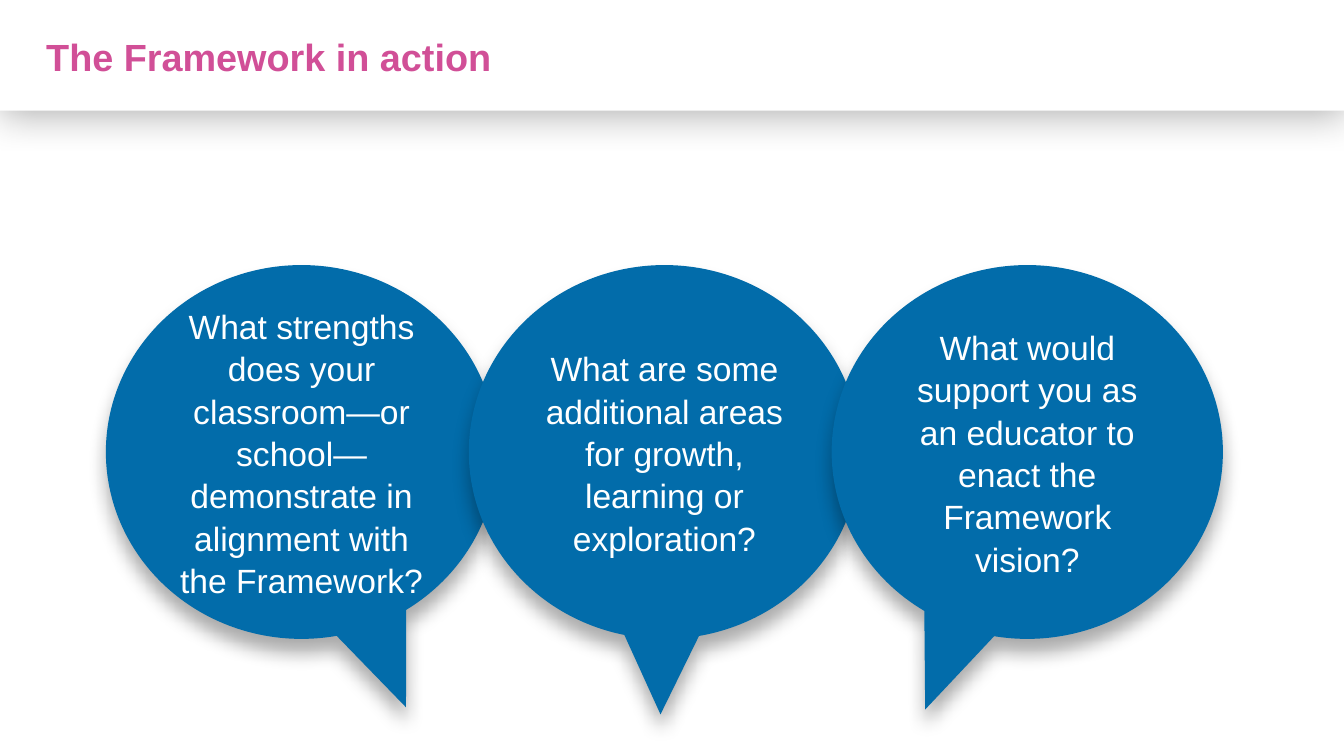
from lxml.etree import SubElement
from pptx import Presentation
from pptx.dml.color import RGBColor
from pptx.enum.shapes import MSO_SHAPE
from pptx.enum.text import MSO_ANCHOR, PP_ALIGN
from pptx.oxml.ns import qn
from pptx.util import Cm, Pt

COLORS = {"white": "FFFFFF", "pink": "D14F97", "blue": "026CAA", "shadow": "000000"}
TITLE_FONT = {"name": "Arial", "size": Pt(27), "bold": True}
BUBBLE_FONT = {"name": "Arial", "size": Pt(24), "bold": False}
TITLE_FRAME = {"word_wrap": True, "vertical_anchor": MSO_ANCHOR.MIDDLE}
BUBBLE_FRAME = {"word_wrap": True, "vertical_anchor": MSO_ANCHOR.MIDDLE}
TITLE_PARAGRAPH = {"alignment": PP_ALIGN.LEFT}
BUBBLE_PARAGRAPH = {"alignment": PP_ALIGN.CENTER, "space_after": Pt(18), "line_spacing": 1.05}
HEADER_SHADOW = {"opacity": 30, "blur": 28, "distance": 3}
BUBBLE_SHADOW = {"opacity": 32, "blur": 13, "distance": 10}
BUBBLES = [
    ("What strengths does your classroom—or school—demonstrate in alignment with the Framework?", (0.267, 0.683)),
    ("What are some additional areas for growth, learning or exploration?", (-0.01, 0.702)),
    ("What would support you as an educator to enact the Framework vision?", (-0.261, 0.689)),
]


def apply_format(target, values):
    for name, value in values.items():
        setattr(target, name, value)


def write_text(shape, text, color, font, paragraph, frame):
    apply_format(shape.text_frame, frame)
    para = shape.text_frame.paragraphs[0]
    apply_format(para, paragraph)
    span = para.add_run()
    span.text = text
    apply_format(span.font, font)
    span.font.color.rgb = RGBColor.from_string(COLORS[color])


def add_shadow(shape, opacity, blur, distance):
    shape.shadow.inherit = False
    effects = shape.element.spPr.find(qn("a:effectLst"))
    shadow = SubElement(effects, qn("a:outerShdw"), blurRad=str(Pt(blur)),
                        dist=str(Pt(distance)), dir="5400000", algn="t", rotWithShape="0")
    tint = SubElement(shadow, qn("a:srgbClr"), val=COLORS["shadow"])
    SubElement(tint, qn("a:alpha"), val=str(opacity * 1000))


def add_filled_shape(page, kind, box, color, shadow):
    shape = page.shapes.add_shape(kind, *box)
    shape.fill.solid()
    shape.fill.fore_color.rgb = RGBColor.from_string(COLORS[color])
    shape.line.fill.background()
    add_shadow(shape, **shadow)
    return shape


def add_header(page, box, text):
    left, top, width, height = box
    band = add_filled_shape(page, MSO_SHAPE.RECTANGLE, box, "white", HEADER_SHADOW)
    title = page.shapes.title
    title.element.addprevious(band.element)
    apply_format(title, {"left": left + Cm(0.91), "top": top + Cm(0.69),
                         "width": width - Cm(2.29), "height": Cm(1.45)})
    write_text(title, text, "pink", TITLE_FONT, TITLE_PARAGRAPH, TITLE_FRAME)


def add_bubbles(page, box, bubbles):
    left, top, width, height = box
    bubble_width = Cm(9.86)
    step = (width - bubble_width) // (len(bubbles) - 1)
    for index, (text, tail) in enumerate(bubbles):
        bubble_box = (left + index * step, top, bubble_width, height)
        bubble = add_filled_shape(page, MSO_SHAPE.OVAL_CALLOUT, bubble_box, "blue", BUBBLE_SHADOW)
        bubble.adjustments[0], bubble.adjustments[1] = tail
        write_text(bubble, text, "white", BUBBLE_FONT, BUBBLE_PARAGRAPH, BUBBLE_FRAME)


def main():
    deck = Presentation()
    deck.slide_width, deck.slide_height = Cm(33.87), Cm(19.05)
    page = deck.slides.add_slide(deck.slide_layouts[5])
    add_header(page, (0, 0, deck.slide_width, Cm(2.79)), "The Framework in action")
    add_bubbles(page, (Cm(2.67), Cm(6.68), Cm(28.15), Cm(9.42)), BUBBLES)
    deck.save("out.pptx")


if __name__ == "__main__":
    main()
